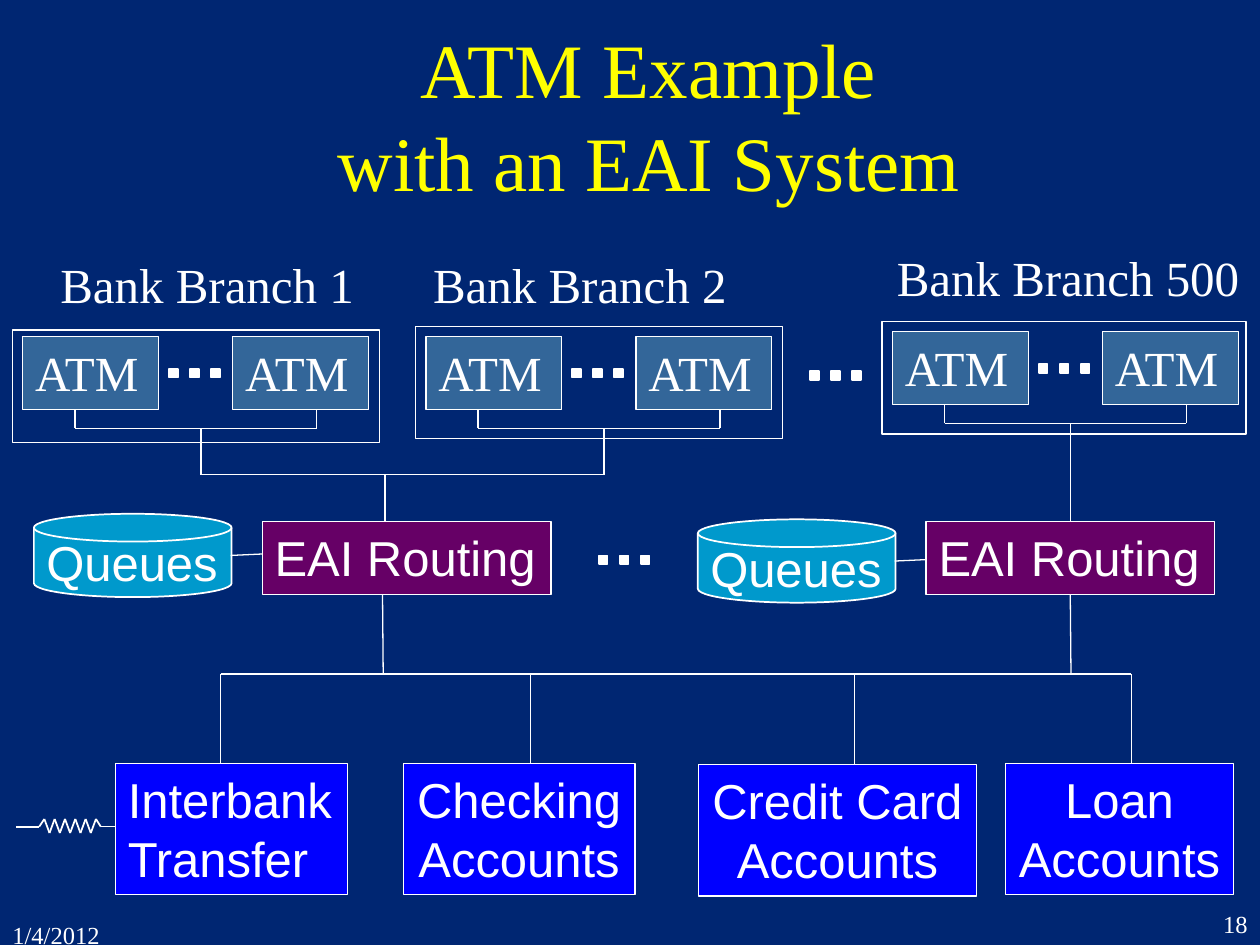
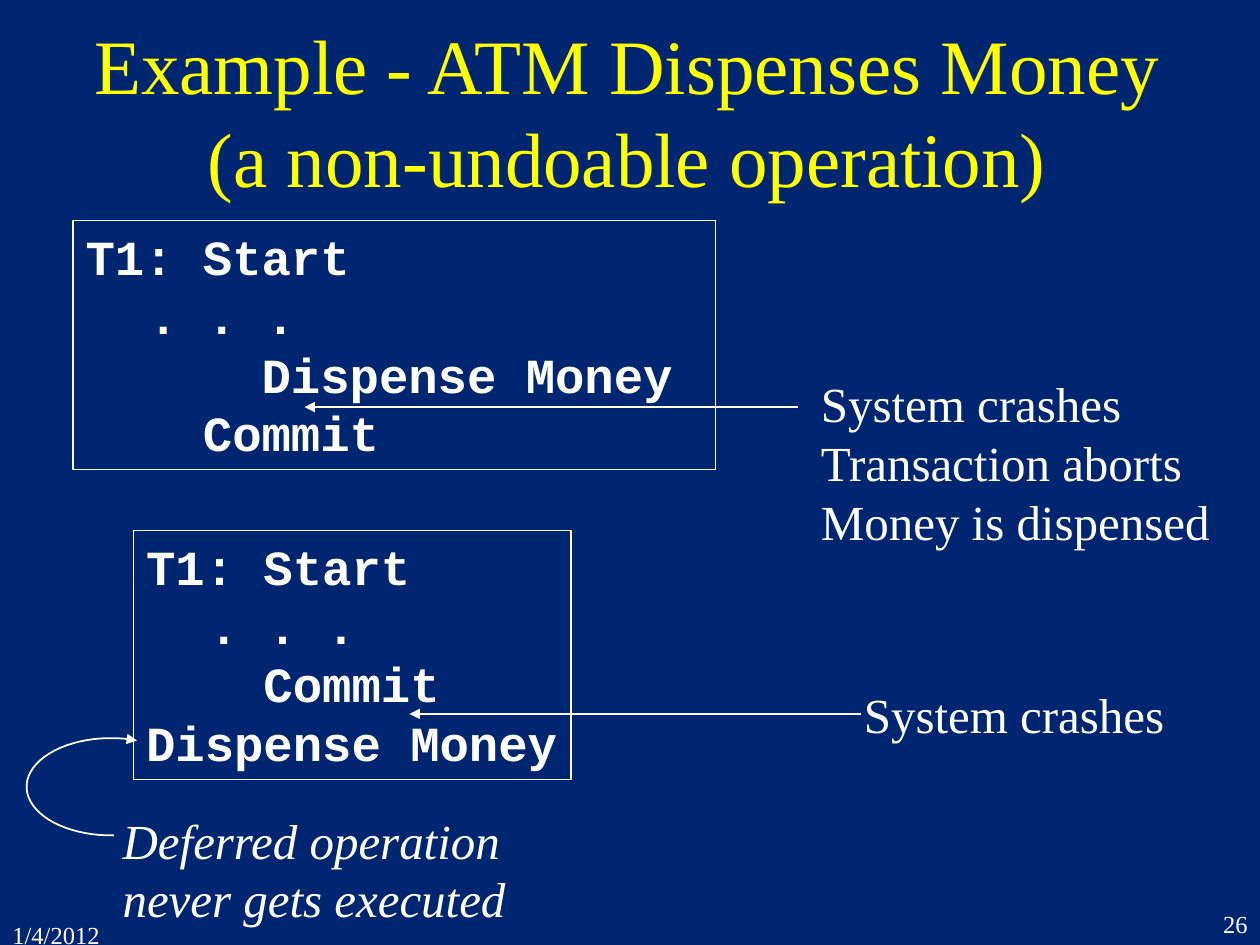
from itertools import pairwise
from math import cos, radians, sin

from lxml.etree import SubElement
from pptx import Presentation
from pptx.dml.color import RGBColor
from pptx.enum.shapes import MSO_CONNECTOR as Connector, MSO_SHAPE as Shape
from pptx.enum.text import MSO_ANCHOR as Anchor, PP_ALIGN as Align
from pptx.oxml.ns import qn
from pptx.util import Pt

NAVY = RGBColor(0x00, 0x26, 0x72)
YELLOW = RGBColor(0xFF, 0xFF, 0x00)
WHITE = RGBColor(0xFF, 0xFF, 0xFF)
BLUE = RGBColor(0x00, 0x00, 0xFF)
PURPLE = RGBColor(0x66, 0x00, 0x66)
STEEL = RGBColor(0x33, 0x66, 0x99)
CYAN = RGBColor(0x00, 0x99, 0xCC)

SERIF, SANS, MONO = "Times New Roman", "Arial", "Courier New"
LINE_PITCH = 1.2
DATE = "1/4/2012"


class Deck:
    def __init__(self):
        self.presentation = Presentation()
        self.presentation.slide_width = Pt(720)
        self.presentation.slide_height = Pt(540)
        self.slide = None

    def new_slide(self, title, title_box, number):
        self.slide = self.presentation.slides.add_slide(self.presentation.slide_layouts[6])
        self.slide.background.fill.solid()
        self.slide.background.fill.fore_color.rgb = NAVY
        self.text(title_box, [title], size=44, color=YELLOW, align=Align.CENTER,
                  anchor=Anchor.MIDDLE, wrap=True)
        self.text((0, 522, 84, 18), [DATE], size=14, wrap=True)
        self.text((666, 516, 54, 24), [number], size=14, align=Align.RIGHT, wrap=True)

    def fill_text(self, shape, lines, font=SERIF, size=28, color=WHITE, align=Align.LEFT,
                  anchor=Anchor.TOP, wrap=False, bold=False, italic=False):
        frame = shape.text_frame
        frame.word_wrap = wrap
        frame.vertical_anchor = anchor
        for index, line in enumerate(lines):
            paragraph = frame.add_paragraph() if index else frame.paragraphs[0]
            paragraph.alignment = align
            paragraph.line_spacing = Pt(round(size * LINE_PITCH, 1))
            for part_index, part in enumerate(line.split("\n")):
                if part_index:
                    paragraph.add_line_break()
                run = paragraph.add_run()
                run.text = part
                run.font.name = font
                run.font.size = Pt(size)
                run.font.color.rgb = color
                run.font.bold = bold
                run.font.italic = italic

    def text(self, box, lines, **style):
        self.fill_text(self.slide.shapes.add_textbox(*map(Pt, box)), lines, **style)

    def outline(self, shape, fill=None, weight=0.75):
        shape.shadow.inherit = False
        if fill is None:
            shape.fill.background()
        else:
            shape.fill.solid()
            shape.fill.fore_color.rgb = fill
        shape.line.color.rgb = WHITE
        shape.line.width = Pt(weight)

    def box(self, box, fill=None, lines=(), kind=Shape.RECTANGLE, weight=0.75, **style):
        shape = self.slide.shapes.add_shape(kind, *map(Pt, box))
        self.outline(shape, fill, weight)
        if lines:
            self.fill_text(shape, lines, **style)

    def arrowhead(self, shape):
        outline = shape._element.spPr.find(qn("a:ln"))
        SubElement(outline, qn("a:tailEnd"), type="triangle")

    def line(self, start, end, weight=0.75, arrow=False):
        connector = self.slide.shapes.add_connector(
            Connector.STRAIGHT, *map(Pt, (*start, *end)))
        connector.line.color.rgb = WHITE
        connector.line.width = Pt(weight)
        if arrow:
            self.arrowhead(connector)
        SubElement(connector._element.spPr, qn("a:effectLst"))

    def polyline(self, points, weight):
        for start, end in pairwise(points):
            self.line(start, end, weight)

    def curved_arrow(self, center, radii, angles):
        points = [(Pt(center[0] + radii[0] * cos(radians(angle))),
                   Pt(center[1] + radii[1] * sin(radians(angle)))) for angle in angles]
        builder = self.slide.shapes.build_freeform(*points[0])
        builder.add_line_segments(points[1:], close=False)
        shape = builder.convert_to_shape()
        self.outline(shape, weight=1)
        self.arrowhead(shape)

    def dots(self, left, top):
        for index in range(3):
            self.box((left + 12 * index, top, 5, 5), WHITE, weight=1)

    def branch(self, name, label_box, frame, left, top, trunk_end):
        self.text(label_box, [name])
        self.box(frame)
        for atm_left in (left, left + 120):
            self.box((atm_left, top, 77.6, 41.8), STEEL, ["ATM"])
        self.dots(left + 83.6, top + 18.6)
        bar = top + 52.5
        self.line((left + 29.8, bar), (left + 168, bar))
        for stem in (left + 29.8, left + 168):
            self.line((stem, bar), (stem, top + 41.8))
        self.line((left + 101.8, bar), (left + 101.8, trunk_end))

    def router(self, left, top):
        self.box((left, top, 113, 47.6), CYAN, kind=Shape.FLOWCHART_MAGNETIC_DISK, weight=1)
        self.text((left, top + 7.2, 113, 41), ["Queues"], font=SANS)
        self.line((left + 112.4, top + 23.8), (left + 130.4, top + 23))
        self.box((left + 130.4, 298, 165, 41.8), PURPLE, ["EAI Routing"], font=SANS)


def build_eai_slide(deck):
    deck.new_slide("ATM Example\nwith an EAI System", (64.8, 20.2, 612, 90), "18")

    deck.branch("Bank Branch 1", (27.4, 141.8, 182, 41), (7.2, 188.6, 209.6, 64.4),
                13, 192.2, 271.4)
    deck.branch("Bank Branch 2", (240.4, 141.8, 182, 41), (237.4, 186.4, 210, 64.4),
                243.4, 192.2, 271.4)
    deck.branch("Bank Branch 500", (505.4, 138, 210, 41), (504, 183.6, 208, 64.4),
                510, 189.4, 298)
    deck.dots(463, 212)

    deck.line((114.5, 271.2), (345.5, 271.2))
    deck.line((220, 271.2), (220, 298))
    deck.router(19.4, 293.6)
    deck.router(398.8, 296.8)
    deck.dots(342.2, 317.4)

    bus = 385.2
    deck.line((126, bus), (646.4, bus))
    deck.line((219, bus), (218.6, 339.8))
    deck.line((612, bus), (611.6, 339.8))

    accounts = [
        (["Interbank", "Transfer"], 66, 436.4, 132.6, 126, Align.LEFT),
        (["Checking", "Accounts"], 230.4, 436.4, 132.4, 303, Align.CENTER),
        (["Credit Card", "Accounts"], 399, 437, 159, 488.4, Align.CENTER),
        (["Loan", "Accounts"], 574.4, 436.4, 130.6, 646.4, Align.CENTER),
    ]
    for lines, left, top, width, drop, align in accounts:
        deck.line((drop, bus), (drop, 437))
        deck.box((left, top, width, 75), BLUE, lines, font=SANS, align=align)

    axis = 472.4
    zigzag = [(22.4 + 2.95 * step, 468 if step % 2 else 476) for step in range(1, 12)]
    deck.polyline([(9.4, axis), (22.4, axis), *zigzag, (57.6, axis)], 1)
    deck.line((57.6, axis), (66, axis))


def build_dispense_slide(deck):
    deck.new_slide("Example - ATM Dispenses Money\n(a non-undoable operation)",
                   (33, 18, 651, 90), "26")

    code = {"font": MONO, "bold": True}
    deck.box((76.4, 303, 250, 142.4), None,
             ["T1: Start", "\t. . .", "    Commit", "Dispense Money"], **code)
    deck.box((41.8, 126, 367.2, 142.4), None,
             ["T1: Start", "\t. . .", "      Dispense Money", "    Commit"],
             wrap=True, **code)

    deck.text((486.6, 387.4, 186.6, 41), ["System crashes"])
    deck.line((492, 408), (234, 408), arrow=True)
    deck.text((462, 210, 237, 108),
              ["System crashes", "Transaction aborts", "Money is dispensed"])
    deck.line((456, 232.6), (174, 232.6), arrow=True)

    deck.text((63, 459.4, 282, 74), ["Deferred operation never gets executed"],
              italic=True, wrap=True)
    deck.curved_arrow((63.4, 449.6), (48.2, 27.8), range(88, 289, 5))


def main():
    deck = Deck()
    build_eai_slide(deck)
    build_dispense_slide(deck)
    deck.presentation.save("out.pptx")


if __name__ == "__main__":
    main()
